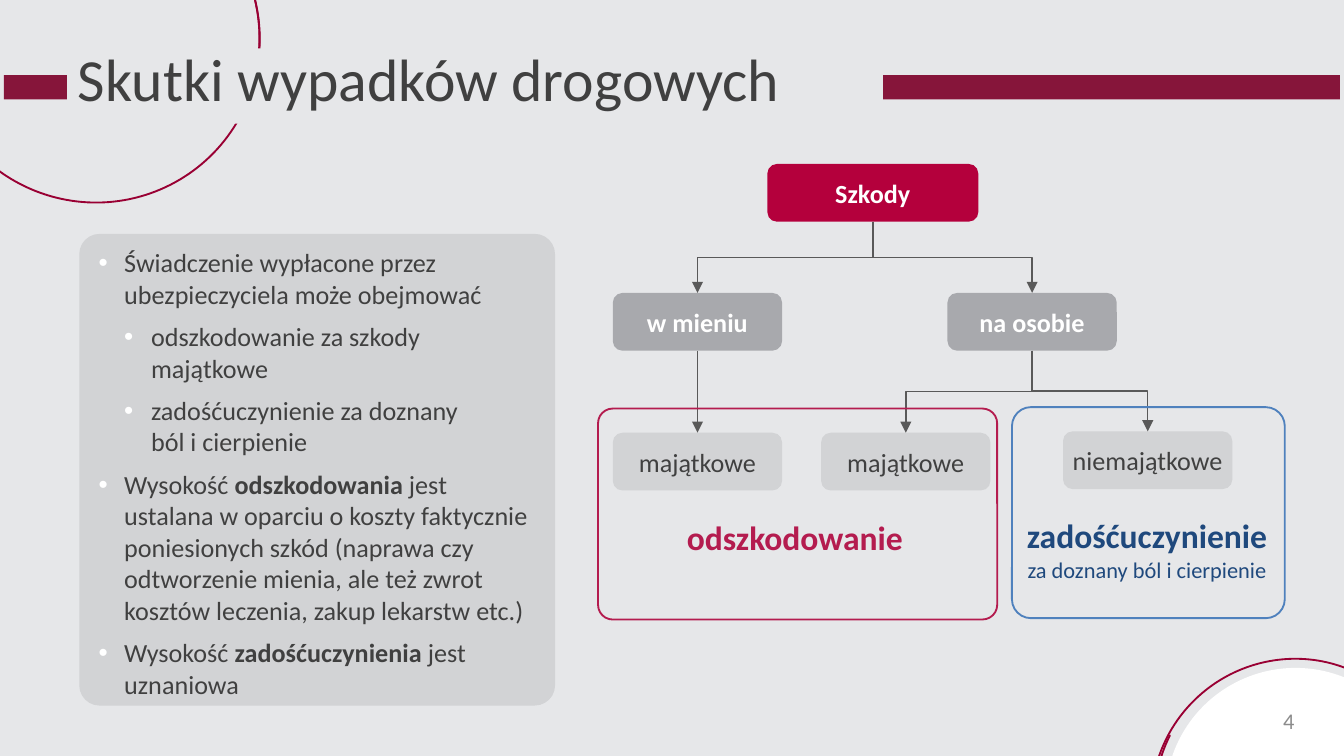
from dataclasses import dataclass

from lxml.etree import SubElement
from pptx import Presentation
from pptx.dml.color import RGBColor
from pptx.enum.shapes import MSO_CONNECTOR, MSO_SHAPE
from pptx.enum.text import MSO_ANCHOR, MSO_AUTO_SIZE, PP_ALIGN
from pptx.oxml.ns import qn
from pptx.util import Inches, Pt

FONT = "Calibri"
BACKGROUND = RGBColor(0xE6, 0xE7, 0xE9)
MAROON = RGBColor(0x86, 0x15, 0x3A)
ARC_RED = RGBColor(0x99, 0x00, 0x33)
CRIMSON = RGBColor(0xB4, 0x00, 0x3C)
RASPBERRY = RGBColor(0xB4, 0x1C, 0x4F)
BLUE = RGBColor(0x4F, 0x81, 0xBD)
NAVY = RGBColor(0x1F, 0x49, 0x7D)
WHITE = RGBColor(0xFF, 0xFF, 0xFF)
TEXT = RGBColor(0x40, 0x40, 0x40)
LINE = RGBColor(0x59, 0x59, 0x59)
NUMBER = RGBColor(0x8C, 0x8C, 0x8C)
MID_GREY = RGBColor(0xA8, 0xA9, 0xAD)
LIGHT_GREY = RGBColor(0xD2, 0xD3, 0xD5)

COLUMNS, ROWS = 100, 56.25
CELL = Inches(0.1)

BODY = [
    (0, ["Świadczenie wypłacone przez ubezpieczyciela może obejmować"]),
    (1, ["odszkodowanie za szkody majątkowe"]),
    (1, ["zadośćuczynienie za doznany \vból i cierpienie"]),
    (0, ["Wysokość ", "odszkodowania",
         " jest ustalana w oparciu o koszty faktycznie poniesionych szkód "
         "(naprawa czy odtworzenie mienia, ale też zwrot kosztów leczenia, "
         "zakup lekarstw etc.)"]),
    (0, ["Wysokość ", "zadośćuczynienia", " jest uznaniowa"]),
]
INDENTS = [(0.19, -0.19), (0.39, -0.2)]


@dataclass
class Box:
    """A rectangle in grid columns and rows."""
    x: float
    y: float
    w: float
    h: float

    def inner(self, x, y, w, h):
        return Box(self.x + x, self.y + y, w, h)

    def emu(self):
        return [round(v * CELL) for v in (self.x, self.y, self.w, self.h)]


def format_runs(p, size, color, bold=None):
    for r in p.runs:
        r.font.name, r.font.size = FONT, Pt(size)
        r.font.color.rgb = color
        if bold is not None:
            r.font.bold = bold


def add_shape(s, kind, box, fill=None, line=None):
    sp = s.shapes.add_shape(kind, *box.emu())
    sp.shadow.inherit = False
    if fill is None:
        sp.fill.background()
    else:
        sp.fill.solid()
        sp.fill.fore_color.rgb = fill
    if line is None:
        sp.line.fill.background()
    else:
        sp.line.color.rgb, sp.line.width = line, Pt(1)
    return sp


def add_label(s, box, text, fill=None, color=TEXT, size=14, bold=False):
    sp = add_shape(s, MSO_SHAPE.ROUNDED_RECTANGLE, box, fill)
    tf = sp.text_frame
    tf.word_wrap, tf.vertical_anchor = False, MSO_ANCHOR.MIDDLE
    tf.text = text
    p = tf.paragraphs[0]
    p.alignment = PP_ALIGN.CENTER
    format_runs(p, size, color, bold)
    return sp


def add_arc(s, box, start, rotation):
    """Thin arc from the start angle, turned as a whole by rotation."""
    sp = add_shape(s, MSO_SHAPE.BLOCK_ARC, box, MAROON, ARC_RED)
    for i, value in enumerate((start * 0.6, 1.76 * 0.6, 0)):
        sp.adjustments[i] = value
    sp.rotation = rotation


def add_arrow(s, parent, child):
    """Arrow from the bottom of parent to the top of child."""
    x1, x2 = (n.left + n.width // 2 for n in (parent, child))
    y1, y2 = parent.top + parent.height, child.top
    dx, dy = x2 - x1, y2 - y1
    straight = abs(dx) < CELL // 10
    kind = MSO_CONNECTOR.STRAIGHT if straight else MSO_CONNECTOR.ELBOW
    c = s.shapes.add_connector(kind, x1, y1, x2, y2)
    c.begin_connect(parent, 2)
    c.end_connect(child, 0)
    spPr = c._element.spPr
    if not straight:  # turn the elbow so that it leaves downwards
        c.left, c.top = (x1 + x2 - dy) // 2, (y1 + y2 - abs(dx)) // 2
        c.width, c.height = dy, abs(dx)
        xfrm = spPr.find(qn("a:xfrm"))
        for flip in ("flipH", "flipV"):
            xfrm.attrib.pop(flip, None)
        xfrm.set("rot", str((90 if dx < 0 else 270) * 60000))
        if dx > 0:
            xfrm.set("flipH", "1")
    c.line.color.rgb, c.line.width = LINE, Pt(0.75)
    SubElement(spPr.find(qn("a:ln")), qn("a:tailEnd"), type="triangle")
    SubElement(spPr, qn("a:effectLst"))


def add_decoration(s, top_left, bottom_right):
    for rotation, start in ((12.3, 170.45), (132.3, 155.79)):
        add_arc(s, top_left, start, rotation)
    add_shape(s, MSO_SHAPE.RECTANGLE, Box(0.3, 5.6, COLUMNS - 0.6, 1.8), MAROON)
    add_arc(s, bottom_right.inner(0.3, 0.1, 21.1, 20.6), 170.45, 205.2)
    add_arc(s, bottom_right.inner(0, 0, 21.1, 20.6), 163.48, 325.2)
    add_shape(s, MSO_SHAPE.OVAL, bottom_right.inner(1.1, 0.6, 19.4, 19.4), WHITE)


def place(s, ph, box, fill):
    """Move a placeholder to the box, in front of what is already drawn."""
    s.shapes._spTree.append(ph._element)
    ph.left, ph.top, ph.width, ph.height = box.emu()
    ph.fill.solid()
    ph.fill.fore_color.rgb = fill
    tf = ph.text_frame
    tf.word_wrap, tf.auto_size = True, MSO_AUTO_SIZE.NONE
    tf.vertical_anchor = MSO_ANCHOR.TOP
    return tf


def add_title(s, box):
    tf = place(s, s.shapes.title, box, BACKGROUND)
    tf.margin_left = tf.margin_right = Inches(0.08)
    tf.margin_top, tf.margin_bottom = Inches(0.04), Inches(0.12)
    tf.text = "Skutki wypadków drogowych"
    p = tf.paragraphs[0]
    p.alignment, p.line_spacing = PP_ALIGN.LEFT, Pt(32)
    format_runs(p, 32, TEXT)


def add_body(s, box):
    ph = s.placeholders[1]
    tf = place(s, ph, box, LIGHT_GREY)
    geom = ph._element.spPr.get_or_change_to_prstGeom("roundRect") if hasattr(
        ph._element.spPr, "get_or_change_to_prstGeom") else None
    if geom is None:
        geom = SubElement(ph._element.spPr, qn("a:prstGeom"), prst="roundRect")
        ph._element.spPr.find(qn("a:xfrm")).addnext(geom)
    guides = SubElement(geom, qn("a:avLst"))
    SubElement(guides, qn("a:gd"), name="adj", fmla="val 4300")
    for i, (level, (lead, *rest)) in enumerate(BODY):
        p = tf.add_paragraph() if i else tf.paragraphs[0]
        p.text, p.level, p.space_before = lead, level, Pt(6)
        for j, part in enumerate(rest):
            r = p.add_run()
            r.text, r.font.bold = part, j == 0
        format_runs(p, 14, TEXT)
        pPr = p._p.get_or_add_pPr()
        for name, value in zip(("marL", "indent"), INDENTS[level]):
            pPr.set(name, str(Inches(value)))
        color = SubElement(pPr, qn("a:buClr"))
        SubElement(color, qn("a:srgbClr"), val=str(WHITE))
        SubElement(pPr, qn("a:buFont"), typeface="Arial")
        SubElement(pPr, qn("a:buChar"), char="•")


def add_damage_tree(s, box):
    def node(x, y, text, fill, color=TEXT, w=12.6):
        return add_label(s, box.inner(x, y, w, 4.3), text, fill, color,
                         bold=color == WHITE)

    root = node(12.6, 0, "Szkody", CRIMSON, WHITE, 15.7)
    goods = node(1.1, 9.6, "w mieniu", MID_GREY, WHITE)
    person = node(26, 9.6, "na osobie", MID_GREY, WHITE)
    goods_loss = node(1.1, 20, "majątkowe", LIGHT_GREY)
    person_loss = node(16.6, 20, "majątkowe", LIGHT_GREY)
    pain = node(34.6, 19.9, "niemajątkowe", LIGHT_GREY)
    for parent, child in ((root, goods), (root, person), (goods, goods_loss),
                          (person, person_loss), (person, pain)):
        add_arrow(s, parent, child)

    for x, y, w, adj, color in ((0, 18.2, 29.7, 0.07, RASPBERRY),
                                (30.8, 18.1, 20.3, 0.09, BLUE)):
        frame = add_shape(s, MSO_SHAPE.ROUNDED_RECTANGLE,
                          box.inner(x, y, w, 15.7), line=color)
        frame.adjustments[0] = adj
    add_label(s, box.inner(0, 25.6, 29.3, 4.3), "odszkodowanie",
              color=RASPBERRY, size=18, bold=True)
    sp = add_label(s, box.inner(30.6, 26.5, 20.5, 4.3),
                   "zadośćuczynienie\vza doznany ból i cierpienie",
                   color=NAVY, size=18, bold=True)
    note = sp.text_frame.paragraphs[0].runs[1]
    note.font.size, note.font.bold = Pt(12), False


def add_page_number(s, box):
    tf = s.shapes.add_textbox(*box.emu()).text_frame
    tf.word_wrap, tf.vertical_anchor = True, MSO_ANCHOR.MIDDLE
    tf.text = "4"
    p = tf.paragraphs[0]
    p.alignment = PP_ALIGN.RIGHT
    format_runs(p, 12, NUMBER)


def main():
    prs = Presentation()
    prs.slide_width, prs.slide_height = COLUMNS * CELL, round(ROWS * CELL)
    s = prs.slides.add_slide(prs.slide_layouts[1])
    s.background.fill.solid()
    s.background.fill.fore_color.rgb = BACKGROUND
    add_decoration(s, Box(-5.1, -9.4, 24.4, 24.5), Box(85.6, 49.1, 21.4, 20.7))
    add_title(s, Box(5, 3.6, 60.7, 5.6))
    add_page_number(s, Box(83.5, 52.1, 13.8, 3))
    add_body(s, Box(5.9, 17.4, 35.4, 35.1))
    add_damage_tree(s, Box(44.5, 12.2, 51.1, 33.9))
    prs.save("out.pptx")


if __name__ == "__main__":
    main()
